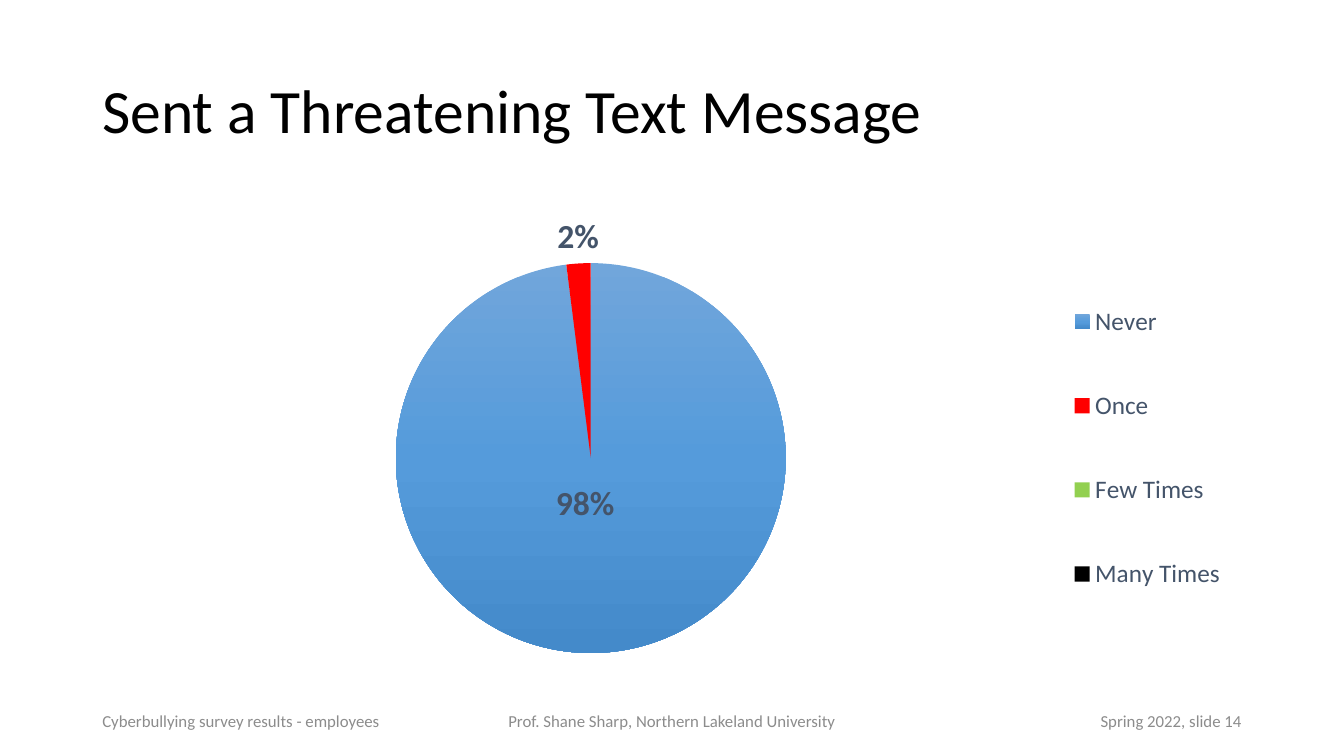
from pptx import Presentation
from pptx.chart.data import CategoryChartData as Data
from pptx.dml.color import RGBColor as RGB
from pptx.enum.chart import XL_CHART_TYPE as Kind, XL_LEGEND_POSITION as Side
from pptx.enum.text import MSO_ANCHOR as Anchor, PP_ALIGN as Align
from pptx.oxml import parse_xml
from pptx.oxml.ns import nsdecls
from pptx.util import Pt

COLORS = {"title": "000000", "foot": "8C8C8C", "label": "44546A",
          "top": "71A6DB", "mid": "559BDB", "low": "448ACA",
          "once": "FF0000", "few": "92D050", "many": "000000"}
FONT = "Calibri"


def layout(x, y, w=None, h=None, inner=False):
    """Manual chart layout; offsets only when no size is given."""
    body = '<c:layoutTarget val="inner"/>' if inner else ""
    if w:
        body += '<c:xMode val="edge"/><c:yMode val="edge"/>'
    body += f'<c:x val="{x}"/><c:y val="{y}"/>'
    if w:
        body += f'<c:w val="{w}"/><c:h val="{h}"/>'
    return (f'<c:layout {nsdecls("c")}><c:manualLayout>{body}'
            '</c:manualLayout></c:layout>')


def labels(spots, hidden):
    """Percent labels: spots maps a slice to position and offset."""
    style = ('<c:numFmt formatCode="0%" sourceLinked="0"/>'
             '<c:txPr><a:bodyPr/><a:p><a:pPr><a:defRPr sz="2400" b="1">'
             f'<a:solidFill><a:srgbClr val="{COLORS["label"]}"/></a:solidFill>'
             f'<a:latin typeface="{FONT}"/></a:defRPr></a:pPr></a:p></c:txPr>')
    show = "".join(f'<c:show{key} val="{int(key == "Percent")}"/>' for key in
                   ("LegendKey", "Val", "CatName", "SerName", "Percent", "BubbleSize"))
    items = "".join(f'<c:dLbl><c:idx val="{i}"/>{layout(x, y)}{style}'
                    f'<c:dLblPos val="{pos}"/>{show}</c:dLbl>'
                    for i, (pos, x, y) in spots.items())
    items += "".join(f'<c:dLbl><c:idx val="{i}"/><c:delete val="1"/></c:dLbl>'
                     for i in hidden)
    return parse_xml(f'<c:dLbls {nsdecls("c", "a")}>{items}{style}{show}</c:dLbls>')


def shade(fill, names):
    """Make the fill a vertical gradient; return its evenly spaced stops."""
    fill.gradient()
    fill.gradient_angle = 270
    stops = "".join(
        f'<a:gs pos="{100000 * i // (len(names) - 1)}">'
        f'<a:srgbClr val="{COLORS[name]}"/></a:gs>'
        for i, name in enumerate(names))
    return parse_xml(f'<a:gsLst {nsdecls("a")}>{stops}</a:gsLst>')


class Deck:
    def __init__(self):
        self.prs = Presentation()
        self.prs.slide_width, self.prs.slide_height = Pt(960), Pt(540)
        self.slide = self.prs.slides.add_slide(self.prs.slide_layouts[6])

    def style(self, font, size, color):
        font.name, font.size = FONT, Pt(size)
        font.color.rgb = RGB.from_string(COLORS[color])

    def text(self, box, words, size, color, align=Align.LEFT, space=1.0):
        frame = self.slide.shapes.add_textbox(*map(Pt, box)).text_frame
        frame.word_wrap = True
        frame.vertical_anchor = Anchor.MIDDLE
        frame.text = words
        para = frame.paragraphs[0]
        para.alignment, para.line_spacing = align, space
        self.style(para.runs[0].font, size, color)

    def pie(self, box, shares, fills):
        data = Data(number_format="0")
        data.categories = list(shares)
        data.add_series("Series 1", list(shares.values()))
        chart = self.slide.shapes.add_chart(Kind.PIE, *map(Pt, box), data).chart
        chart.has_title = False
        self.style(chart.font, 10, "title")
        root = chart.element
        plot = chart.plots[0]
        plot.vary_by_categories = True
        series = plot.series[0]
        for i, name in enumerate(fills):
            form = series.points[i].format
            form.line.fill.background()
            if isinstance(name, tuple):
                stops = shade(form.fill, name)
                old = root.xpath(".//a:gsLst")[0]
                old.getparent().replace(old, stops)
            else:
                form.fill.solid()
                form.fill.fore_color.rgb = RGB.from_string(COLORS[name])
        spots = {0: ("ctr", -0.01, -0.1), 1: ("outEnd", 0, 0)}
        hidden = [i for i, share in enumerate(shares.values()) if not share]
        root.xpath(".//c:ser/c:cat")[0].addprevious(labels(spots, hidden))

        chart.has_legend = True
        legend = chart.legend
        legend.position, legend.include_in_layout = Side.RIGHT, False
        self.style(legend.font, 18, "label")
        for old in root.xpath(".//c:plotArea/c:layout | .//c:legend/c:layout"):
            old.getparent().remove(old)
        root.xpath(".//c:plotArea")[0].insert(
            0, parse_xml(layout(0.26, 0.12, 0.34, 0.76, inner=True)))
        root.xpath(".//c:legend/c:legendPos")[0].addnext(
            parse_xml(layout(0.83, 0.1, 0.16, 0.76)))


def main():
    deck = Deck()
    deck.text((66, 28.8, 828, 104.4), "Sent a Threatening Text Message",
              44, "title", space=0.9)
    deck.pie((66, 144, 828, 366.5),
             {"Never": 98, "Once": 2, "Few Times": 0, "Many Times": 0},
             [("top", "mid", "low"), "once", "few", "many"])
    for left, width, words, align in (
            (318, 324, "Prof. Shane Sharp, Northern Lakeland University", Align.CENTER),
            (66, 216, "Cyberbullying survey results - employees", Align.LEFT),
            (678, 216, "Spring 2022, slide 14", Align.RIGHT)):
        deck.text((left, 500.5, width, 28.8), words, 12, "foot", align)
    deck.prs.save("out.pptx")


if __name__ == "__main__":
    main()
